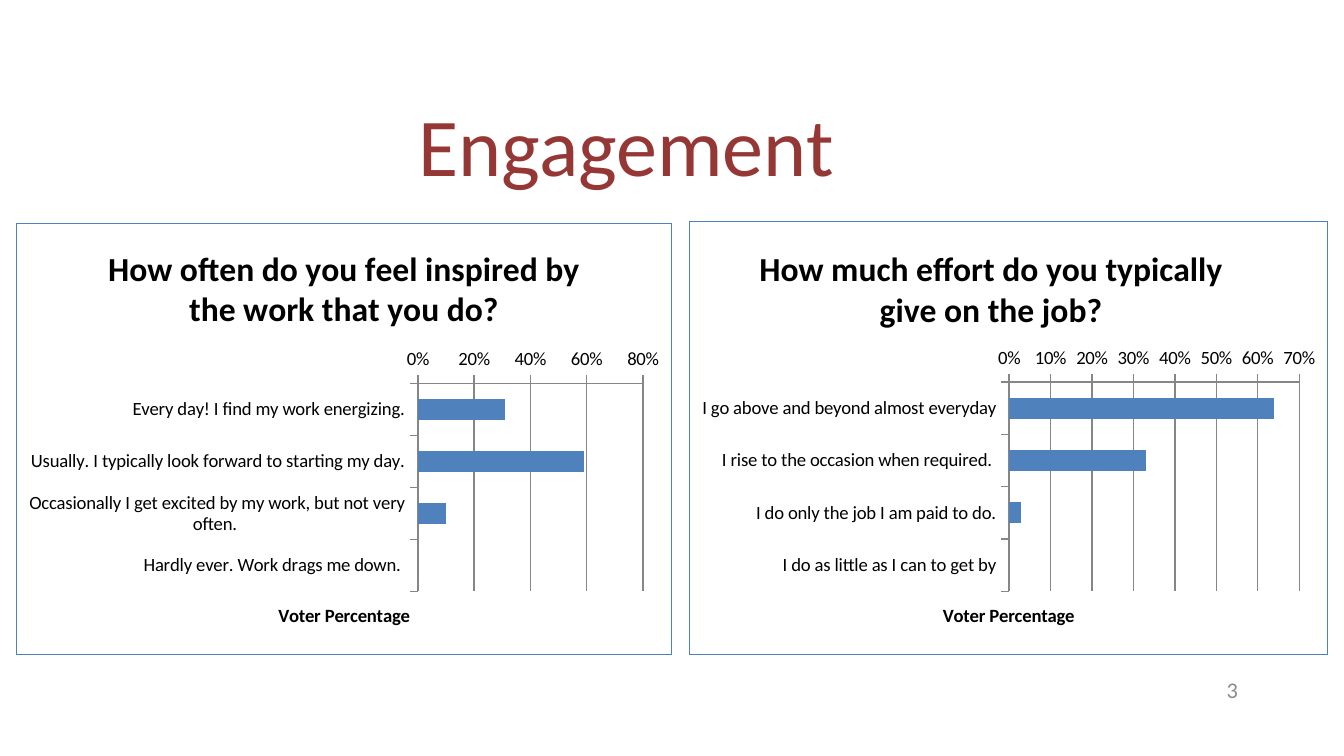
import pptx
import pptx.chart.data
import pptx.dml.color
import pptx.enum.chart
import pptx.enum.text
import pptx.oxml
import pptx.oxml.ns
import pptx.util

FONT = "Calibri"
BLUE, RED, GREY, AXIS_GREY, BLACK = "4F81BD", "953735", "8C8C8C", "868686", "000000"
WIDTH = 10
HEIGHT = WIDTH * 9 / 16

INSPIRED = {
    "Every day! I find my work energizing.": 0.31,
    "Usually. I typically look forward to starting my day.": 0.59,
    "Occasionally I get excited by my work, but not very often. ": 0.1,
    "Hardly ever. Work drags me down. ": 0,
}
EFFORT = {
    "I go above and beyond almost everyday": 0.64,
    "I rise to the occasion when required. ": 0.33,
    "I do only the job I am paid to do.": 0.03,
    "I do as little as I can to get by": 0,
}


def colour(value):
    return pptx.dml.color.RGBColor.from_string(value)


def style_font(font, size, value, bold=False):
    font.name, font.size, font.bold = FONT, pptx.util.Pt(size), bold
    font.color.rgb = colour(value)


def inches(box):
    return [pptx.util.Inches(length) for length in box]


def place_text(shape, box, text, size, value, alignment):
    shape.left, shape.top, shape.width, shape.height = inches(box)
    frame = shape.text_frame
    frame.text = text
    frame.word_wrap = True
    frame.auto_size = pptx.enum.text.MSO_AUTO_SIZE.NONE
    frame.vertical_anchor = pptx.enum.text.MSO_ANCHOR.MIDDLE
    paragraph = frame.paragraphs[0]
    paragraph.alignment = alignment
    style_font(paragraph.runs[0].font, size, value)
    return paragraph


def set_title(title, text, size):
    title.text_frame.text = text
    style_font(title.text_frame.paragraphs[0].runs[0].font, size, BLACK, bold=True)


def move_title(chart, left, top):
    """Place the chart title at shares of the chart's size."""
    namespaces = pptx.oxml.ns.nsdecls("c")
    layout = pptx.oxml.parse_xml(
        f'<c:layout {namespaces}><c:manualLayout><c:xMode val="edge"/><c:yMode val="edge"/>'
        f'<c:x val="{left}"/><c:y val="{top}"/></c:manualLayout></c:layout>')
    title = chart.chart_title._element
    for old_layout in title.findall(pptx.oxml.ns.qn("c:layout")):
        title.remove(old_layout)
    title.find(pptx.oxml.ns.qn("c:tx")).addnext(layout)


def draw_border(chart, value):
    """Outline the chart area, which has no public property."""
    namespaces = pptx.oxml.ns.nsdecls("c", "a")
    border = pptx.oxml.parse_xml(
        f'<c:spPr {namespaces}><a:solidFill><a:srgbClr val="FFFFFF"/></a:solidFill>'
        f'<a:ln><a:solidFill><a:srgbClr val="{value}"/></a:solidFill></a:ln></c:spPr>')
    chart.element.find(pptx.oxml.ns.qn("c:chart")).addnext(border)


def poll_chart(slide, box, question, answers, maximum, step):
    data = pptx.chart.data.CategoryChartData(number_format="0%")
    data.categories = list(answers)
    data.add_series("Series 1", list(answers.values()))
    chart = slide.shapes.add_chart(
        pptx.enum.chart.XL_CHART_TYPE.BAR_CLUSTERED, *inches(box), data).chart
    chart.has_legend = False
    style_font(chart.font, 10, BLACK)
    set_title(chart.chart_title, question, 18)
    draw_border(chart, BLUE)

    # Bars
    plot = chart.plots[0]
    plot.gap_width, plot.vary_by_categories = 150, False
    fill = plot.series[0].format.fill
    fill.solid()
    fill.fore_color.rgb = colour(BLUE)

    # Axes: first answer on top
    chart.category_axis.reverse_order = True
    value_axis = chart.value_axis
    value_axis.minimum_scale, value_axis.maximum_scale = 0, maximum
    value_axis.major_unit = step
    value_axis.has_major_gridlines = True
    value_axis.tick_labels.number_format = "0%"
    value_axis.tick_labels.number_format_is_linked = False
    set_title(value_axis.axis_title, "Voter Percentage", 10)
    for axis in (chart.category_axis, value_axis):
        axis.major_tick_mark = pptx.enum.chart.XL_TICK_MARK.OUTSIDE
    for part in (chart.category_axis, value_axis, value_axis.major_gridlines):
        part.format.line.color.rgb = colour(AXIS_GREY)
    return chart


def engagement_slide(presentation):
    slide = presentation.slides.add_slide(presentation.slide_layouts[5])
    align = pptx.enum.text.PP_ALIGN

    # Title
    title = place_text(slide.shapes.title, (0.35, 0.57, 8.62, 1.09),
                       "Engagement", 44, RED, align.CENTER)
    title.line_spacing = 0.9

    # Poll results, side by side
    effort_chart = poll_chart(
        slide, (5.13, 1.65, 4.75, 3.22),
        "How much effort do you typically give on the job?", EFFORT, 0.7, 0.1)
    move_title(effort_chart, 0.1, 0.04)
    poll_chart(slide, (0.12, 1.66, 4.88, 3.21),
               "How often do you feel inspired by the work that you do?", INSPIRED, 0.8, 0.2)

    # Slide number
    number_box = (7.06, 4.98, 2.25, 0.3)
    place_text(slide.shapes.add_textbox(*inches(number_box)), number_box,
               "3", 12, GREY, align.RIGHT)


def main():
    presentation = pptx.Presentation()
    presentation.slide_width, presentation.slide_height = inches((WIDTH, HEIGHT))
    engagement_slide(presentation)
    presentation.save("out.pptx")


if __name__ == "__main__":
    main()
